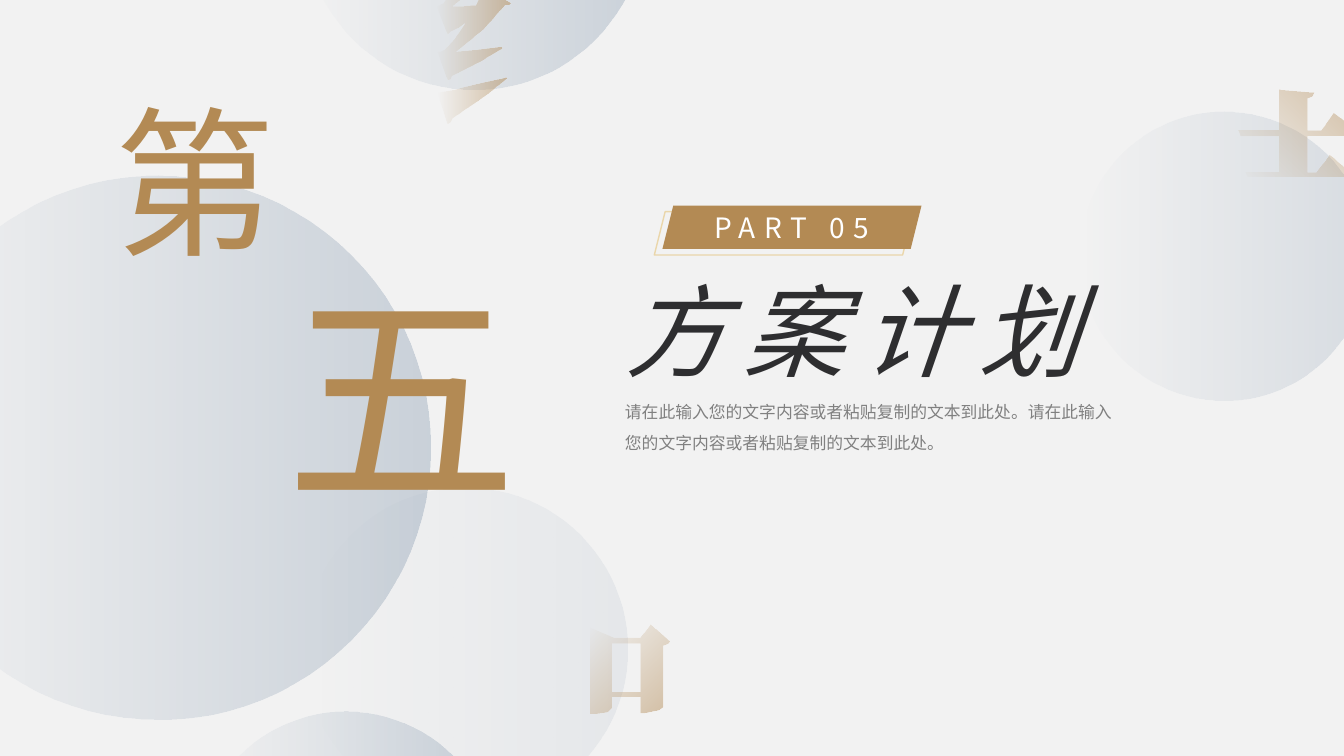
from lxml.etree import SubElement
from pptx import Presentation
from pptx.dml.color import RGBColor
from pptx.enum.shapes import MSO_SHAPE
from pptx.enum.text import MSO_ANCHOR, MSO_AUTO_SIZE, PP_ALIGN
from pptx.oxml.ns import qn
from pptx.util import Inches, Pt

FONT = "Noto Sans CJK SC"
GOLD, SLATE = "B38A54", "6A839F"

# Circles: left, top, diameter, opacity at the dark end
DISCS = [
    (-1.13, 1.74, 5.40, 30),
    (3.01, 4.84, 3.21, 10),
    (1.94, 7.06, 2.98, 30),
    (10.71, 1.11, 2.86, 20),
    (3.01, -2.49, 3.38, 30),
]

# Glyph strokes: gradient angle, then outlines in hundredths of an inch
EARTH = [[
    (1268, 89), (1303, 92), (1301, 96), (1296, 98), (1296, 129), (1310, 129),
    (1322, 112), (1326, 115), (1336, 123), (1346, 131), (1344, 134),
    (1340, 135), (1296, 135), (1296, 170), (1305, 170), (1318, 153),
    (1322, 156), (1331, 164), (1341, 172), (1339, 174), (1335, 175),
    (1237, 175), (1235, 170), (1268, 170), (1268, 135), (1230, 135),
    (1228, 129), (1268, 129),
]]
MOUTH = [
    [(645, 620), (664, 637), (662, 639), (657, 641), (657, 701), (653, 704),
     (639, 707), (635, 707), (635, 691), (607, 691), (607, 702), (603, 706),
     (590, 708), (586, 708), (586, 623), (609, 633), (635, 633)],
    [(607, 639), (607, 686), (635, 686), (635, 639)],
]
THREAD = [[
    (463, -46), (492, -33), (490, -30), (486, -30), (469, -11), (449, 6),
    (460, 6), (472, 5), (476, -4), (479, -13), (506, 3), (504, 5), (500, 5),
    (479, 29), (452, 51), (473, 49), (497, 46), (497, 48), (477, 60),
    (448, 75), (447, 78), (444, 79), (434, 51), (437, 51), (441, 49),
    (451, 38), (462, 22), (455, 27), (447, 31), (446, 32), (444, 34),
    (433, 6), (436, 5), (440, 3), (449, -10), (457, -28),
]]
SWEEP = [[
    (502, 77), (502, 78), (481, 95), (449, 117), (447, 121), (444, 123),
    (434, 92), (451, 89), (475, 83),
]]
GLYPHS = [(135, EARTH), (225, MOUTH), (180, THREAD), (180, SWEEP)]

# Text boxes: place, wording, format
TEXTS = [
    ((0.73, 0.77, 2.4, 2.02), "第",
     dict(size=115, color=GOLD, space=12, align=PP_ALIGN.CENTER)),
    ((2.73, 2.45, 2.4, 2.87), "五",
     dict(size=166, color=GOLD, space=12, align=PP_ALIGN.CENTER)),
    ((6.11, 2.62, 6.09, 1.3), "方案计划",
     dict(size=72, color="2E2E30", space=12, italic=True)),
    ((6.1, 3.84, 5.12, 0.7),
     "请在此输入您的文字内容或者粘贴复制的文本到此处。"
     "请在此输入您的文字内容或者粘贴复制的文本到此处。",
     dict(size=12, color="808080", lead=1.5)),
]

deck = Presentation()
deck.slide_width, deck.slide_height = Inches(13.33), Inches(7.5)
slide = deck.slides.add_slide(deck.slide_layouts[6])
shapes = slide.shapes


def paint(fill, color):
    fill.solid()
    fill.fore_color.rgb = RGBColor.from_string(color)


def fade(shape, color, alpha, angle):
    """Fill with one colour that fades out along the angle."""
    shape.shadow.inherit = False
    shape.line.fill.background()
    shape.fill.gradient()
    grad = shape.fill._fill._gradFill
    for child in list(grad):
        grad.remove(child)
    stops = SubElement(grad, qn("a:gsLst"))
    for pos, part in ((0, alpha), (100, 0)):
        stop = SubElement(stops, qn("a:gs"), pos=str(pos * 1000))
        tint = SubElement(stop, qn("a:srgbClr"), val=color)
        SubElement(tint, qn("a:alpha"), val=str(part * 1000))
    SubElement(grad, qn("a:lin"), ang=str(angle * 60000), scaled="0")


def write(frame, text, size=12, color="FFFFFF", space=0, italic=False,
          align=PP_ALIGN.LEFT, lead=None):
    frame.word_wrap = True
    para = frame.paragraphs[0]
    para.alignment = align
    if lead:
        para.line_spacing = lead
    run = para.add_run()
    run.text = text
    font = run.font
    font.size, font.name, font.italic = Pt(size), FONT, italic
    paint(font.fill, color)
    props = run._r.get_or_add_rPr()
    props.set("spc", str(space * 100))
    SubElement(props, qn("a:ea"), typeface=FONT)


def place(kind, *box):
    shape = shapes.add_shape(kind, *map(Inches, box))
    shape.shadow.inherit = False
    return shape


# Background and circles
paint(slide.background.fill, "F2F2F2")
for left, top, size, alpha in DISCS:
    fade(place(MSO_SHAPE.OVAL, left, top, size, size), SLATE, alpha, 180)

# Glyph strokes
for angle, rings in GLYPHS:
    pen = shapes.build_freeform(*rings[0][0], scale=Inches(0.01))
    pen.add_line_segments(rings[0][1:], close=True)
    for ring in rings[1:]:
        pen.move_to(*ring[0])
        pen.add_line_segments(ring[1:], close=True)
    fade(pen.convert_to_shape(), GOLD, 50, angle)

# Part label
frame = place(MSO_SHAPE.PARALLELOGRAM, 6.49, 2.1, 2.57, 0.43)
frame.fill.background()
paint(frame.line.fill, "EAD6AA")
frame.line.width = Pt(1)
label = place(MSO_SHAPE.PARALLELOGRAM, 6.57, 2.04, 2.57, 0.43)
paint(label.fill, GOLD)
label.line.fill.background()
body = label.text_frame
body.margin_left = body.margin_right = Inches(0.04)
body.vertical_anchor = MSO_ANCHOR.MIDDLE
write(body, "PART 05", size=20, space=6, align=PP_ALIGN.CENTER)

# Chapter number, title and summary
for box, text, style in TEXTS:
    body = shapes.add_textbox(*map(Inches, box)).text_frame
    body.auto_size = MSO_AUTO_SIZE.SHAPE_TO_FIT_TEXT
    write(body, text, **style)

deck.save("out.pptx")
